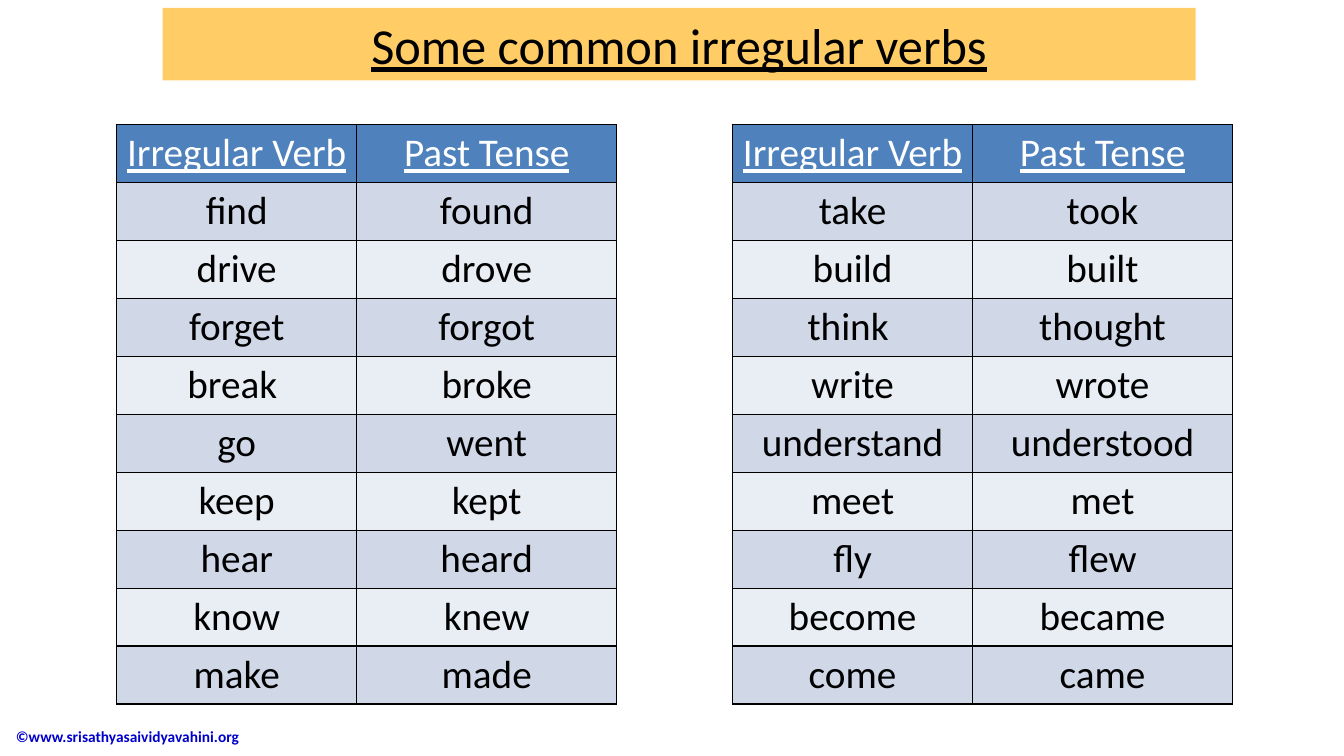
from lxml.etree import SubElement
from pptx import Presentation
from pptx.dml.color import RGBColor
from pptx.enum.shapes import MSO_SHAPE
from pptx.enum.text import MSO_ANCHOR, PP_ALIGN
from pptx.oxml.ns import qn
from pptx.util import Cm, Pt


def set_text(tf, text, size, color, align=PP_ALIGN.CENTER, underline=False, bold=False):
    p = tf.paragraphs[0]
    p.text = text
    p.alignment = align
    p.font.name = "Calibri"
    p.font.size = Pt(size)
    p.font.bold = bold
    p.font.underline = underline
    p.font.color.rgb = RGBColor.from_string(color)


def set_cell_look(cell, fill, border):
    """Fill a cell and give it a 1 pt line on all four sides."""
    tcPr = cell._tc.get_or_add_tcPr()
    for side in ("a:lnL", "a:lnR", "a:lnT", "a:lnB"):
        ln = SubElement(tcPr, qn(side), w=str(Pt(1)))
        SubElement(SubElement(ln, qn("a:solidFill")), qn("a:srgbClr"), val=border)
    cell.fill.solid()
    cell.fill.fore_color.rgb = RGBColor.from_string(fill)


HEADER = ("Irregular Verb", "Past Tense")
LEFT_VERBS = [
    ("find", "found"), ("drive", "drove"), ("forget", "forgot"),
    ("break ", "broke"), ("go", "went"), ("keep", "kept"),
    ("hear", "heard"), ("know", "knew"), ("make", "made"),
]
RIGHT_VERBS = [
    ("take", "took"), ("build", "built"), ("think ", "thought"),
    ("write", "wrote"), ("understand", "understood"), ("meet", "met"),
    ("fly", "flew"), ("become", "became"), ("come", "came"),
]
COLUMN_WIDTHS = (6.05, 6.55)
ROW_HEIGHT = 1.46

prs = Presentation()
prs.slide_width = Cm(33.87)
prs.slide_height = Cm(19.05)
s = prs.slides.add_slide(prs.slide_layouts[6])

# Copyright line
sp = s.shapes.add_textbox(Cm(0.15), Cm(18.03), Cm(8.96), Cm(1.04))
tf = sp.text_frame
tf.word_wrap = True
tf.vertical_anchor = MSO_ANCHOR.MIDDLE
set_text(tf, "©www.srisathyasaividyavahini.org", 11, "0000CC", PP_ALIGN.LEFT, bold=True)

# Title banner
sp = s.shapes.add_shape(MSO_SHAPE.RECTANGLE, Cm(4.1), Cm(0.2), Cm(26.03), Cm(1.83))
sp.shadow.inherit = False
sp.fill.solid()
sp.fill.fore_color.rgb = RGBColor.from_string("FFCC66")
sp.line.fill.background()
tf = sp.text_frame
tf.vertical_anchor = MSO_ANCHOR.MIDDLE
set_text(tf, "Some common irregular verbs", 36, "000000", underline=True)

# Verb tables
for left, verbs in ((2.94, LEFT_VERBS), (18.46, RIGHT_VERBS)):
    rows = [HEADER] + verbs
    table = s.shapes.add_table(
        len(rows), len(HEADER), Cm(left), Cm(3.14),
        Cm(sum(COLUMN_WIDTHS)), Cm(ROW_HEIGHT * len(rows))).table
    for column, width in zip(table.columns, COLUMN_WIDTHS):
        column.width = Cm(width)
    for i, row in enumerate(rows):
        table.rows[i].height = Cm(ROW_HEIGHT)
        is_header = i == 0
        fill = "4F81BD" if is_header else ("E9EDF4", "D0D8E8")[i % 2]
        for j, word in enumerate(row):
            cell = table.cell(i, j)
            set_cell_look(cell, fill, "000000")
            set_text(cell.text_frame, word, 28, "FFFFFF" if is_header else "000000",
                     underline=is_header)

prs.save("out.pptx")
